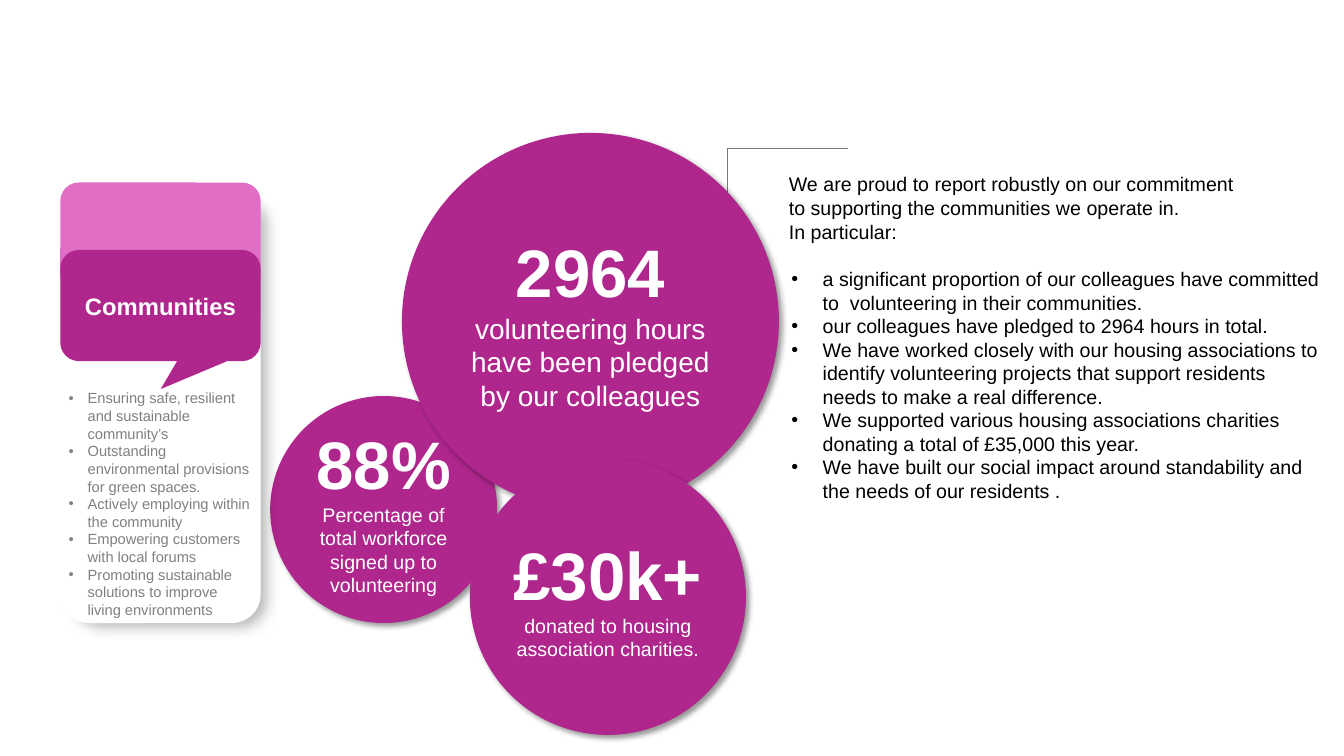
from lxml import etree
from pptx import Presentation
from pptx.dml.color import RGBColor
from pptx.enum.shapes import MSO_CONNECTOR, MSO_SHAPE
from pptx.enum.text import MSO_ANCHOR, MSO_AUTO_SIZE, PP_ALIGN
from pptx.oxml.ns import qn
from pptx.util import Cm, Pt

OVAL, ROUNDED = MSO_SHAPE.OVAL, MSO_SHAPE.ROUNDED_RECTANGLE
CALLOUT = MSO_SHAPE.ROUNDED_RECTANGULAR_CALLOUT
ELBOW = MSO_CONNECTOR.ELBOW
LEFT, CENTER = PP_ALIGN.LEFT, PP_ALIGN.CENTER
TOP, MIDDLE = MSO_ANCHOR.TOP, MSO_ANCHOR.MIDDLE
FIXED, GROW = MSO_AUTO_SIZE.NONE, MSO_AUTO_SIZE.SHAPE_TO_FIT_TEXT

COLORS = {
    "magenta": "AF268D",
    "pink": "E06EC5",
    "white": "FFFFFF",
    "black": "000000",
    "gray": "808080",
    "rule": "7A7A7A",
}
CIRCLE_SHADOW = {"alpha": 40, "blur": 4, "distance": 3}
CARD_SHADOW = {"alpha": 28, "blur": 10, "distance": 10}

INTRO = [
    "We are proud to report robustly on our commitment to supporting "
    "the communities we operate in.",
    "In particular:",
]
ACHIEVEMENTS = [
    "a significant proportion of our colleagues have committed to  "
    "volunteering in their communities.",
    "our colleagues have pledged to 2964 hours in total.",
    "We have worked closely with our housing associations to identify "
    "volunteering projects that support residents needs to make a real difference.",
    "We supported various housing associations charities donating a total "
    "of £35,000 this year.",
    "We have built our social impact around standability and the needs "
    "of our residents .",
]
GOALS = [
    "Ensuring safe, resilient and sustainable community’s",
    "Outstanding environmental provisions for green spaces.",
    "Actively employing within the community",
    "Empowering customers with local forums",
    "Promoting sustainable solutions to improve living environments",
]


def rgb(name):
    return RGBColor.from_string(COLORS[name])


class SlideBuilder:
    font_name = "Arial"

    def __init__(self, slide):
        self.slide = slide

    def shape(self, kind, box, fill, adjustments=(), shadow=None):
        shape = self.slide.shapes.add_shape(kind, *map(Cm, box))
        shape.shadow.inherit = False
        shape.fill.solid()
        shape.fill.fore_color.rgb = rgb(fill)
        shape.line.fill.background()
        for index, value in enumerate(adjustments):
            shape.adjustments[index] = value
        if shadow:
            self.cast_shadow(shape, **shadow)
        return shape

    def cast_shadow(self, shape, alpha, blur, distance):
        """Add a black shadow towards the lower right; lengths in points."""
        effects = shape._element.spPr.find(qn("a:effectLst"))
        outer = etree.SubElement(
            effects, qn("a:outerShdw"), blurRad=str(Pt(blur)),
            dist=str(Pt(distance)), dir="2700000", algn="tl", rotWithShape="0")
        color = etree.SubElement(outer, qn("a:srgbClr"), val=COLORS["black"])
        etree.SubElement(color, qn("a:alpha"), val=str(alpha * 1000))

    def frame(self, shape, **settings):
        for name, value in {"word_wrap": True, **settings}.items():
            setattr(shape.text_frame, name, value)

    def paragraphs(self, shape, lines, size, color, align=LEFT, bold=False):
        text_frame = shape.text_frame
        for index, line in enumerate(lines):
            paragraph = text_frame.add_paragraph() if index else text_frame.paragraphs[0]
            self.paragraph(paragraph, line, size, color, align, bold)

    def paragraph(self, paragraph, text, size, color, align=LEFT, bold=False):
        paragraph.alignment = align
        paragraph.space_before = Pt(0)
        run = paragraph.add_run()
        run.text = text
        font_format = {"name": self.font_name, "size": Pt(size), "bold": bold}
        for name, value in font_format.items():
            setattr(run.font, name, value)
        run.font.color.rgb = rgb(color)

    def bullets(self, shape, lines, size, color, indent):
        self.paragraphs(shape, lines, size, color)
        for paragraph in shape.text_frame.paragraphs:
            properties = paragraph._p.get_or_add_pPr()
            properties.set("marL", str(Cm(indent)))
            properties.set("indent", str(-Cm(indent)))
            etree.SubElement(properties, qn("a:buFont"), typeface=self.font_name)
            etree.SubElement(properties, qn("a:buChar"), char="•")

    def text(self, box, lines, size, color):
        text_box = self.slide.shapes.add_textbox(*map(Cm, box))
        self.frame(text_box, auto_size=GROW)
        self.paragraphs(text_box, lines, size, color)

    def body_list(self, box, lines, size, color, indent):
        body = self.slide.placeholders[1]
        for name, value in zip(("left", "top", "width", "height"), box):
            setattr(body, name, Cm(value))
        self.frame(body, auto_size=FIXED, vertical_anchor=TOP)
        self.bullets(body, lines, size, color, indent)

    def statistic(self, left, top, diameter, figure, caption, size, side=0.25, shift=0):
        """Draw a circle with a large figure; shift moves the figure left."""
        circle = self.shape(OVAL, (left, top, diameter, diameter), "magenta",
                            shadow=CIRCLE_SHADOW)
        self.frame(circle, vertical_anchor=MIDDLE,
                   margin_left=Cm(side), margin_right=Cm(side))
        heading = circle.text_frame.paragraphs[0]
        self.paragraph(heading, figure, 48, "white", CENTER, True)
        if shift:
            heading._p.get_or_add_pPr().set("marL", "0")
            heading._p.get_or_add_pPr().set("indent", str(-2 * Cm(shift)))
        self.paragraph(circle.text_frame.add_paragraph(), caption, size, "white", CENTER)

    def elbow(self, start, end, color, width):
        connector = self.slide.shapes.add_connector(ELBOW, *map(Cm, start + end))
        connector.line.color.rgb = rgb(color)
        connector.line.width = Pt(width)
        etree.SubElement(connector._element.spPr, qn("a:effectLst"))

    def pillar_card(self, left, width, heading, goals):
        self.shape(ROUNDED, (left + 0.11, 4.75, width - 0.2, 10.8), "white",
                   [0.143], CARD_SHADOW)
        card = self.shape(ROUNDED, (left, 7.39, width, 8.31), "white", [0.143])
        self.frame(card, vertical_anchor=TOP, margin_left=0, margin_right=0,
                   margin_top=Cm(2.21), margin_bottom=0)
        self.bullets(card, goals, 10.5, "gray", 0.48)
        self.shape(ROUNDED, (left, 4.6, width, 2.8), "pink")
        label = self.shape(CALLOUT, (left, 6.3, width, 2.8), "magenta",
                           [0.001, 0.752, 0.167])
        self.frame(label, vertical_anchor=MIDDLE)
        self.paragraphs(label, [heading], 17, "white", CENTER, True)


def main():
    presentation = Presentation()
    presentation.slide_width, presentation.slide_height = Cm(33.87), Cm(19.05)
    slide = presentation.slides.add_slide(presentation.slide_layouts[1])
    title = slide.shapes.title._element
    title.getparent().remove(title)

    builder = SlideBuilder(slide)
    builder.body_list((19.69, 6.6, 13.89, 6.25), ACHIEVEMENTS, 14, "black", 0.79)
    builder.statistic(6.81, 9.98, 5.72, "88%",
                      "Percentage of total workforce signed up to volunteering", 14)
    builder.elbow((15.32, 5.44), (21.36, 3.73), "rule", 0.5)
    builder.text((19.63, 4.22, 11.89, 2.06), INTRO, 14, "black")
    builder.statistic(10.13, 3.35, 9.5, "2964",
                      "volunteering hours have been pledged by our colleagues", 20,
                      shift=0.47)
    builder.pillar_card(1.52, 5.05, "Communities", GOALS)
    builder.statistic(11.84, 11.56, 6.96, "£30k+",
                      "donated to housing association charities.", 14, side=0)
    presentation.save("out.pptx")


if __name__ == "__main__":
    main()
